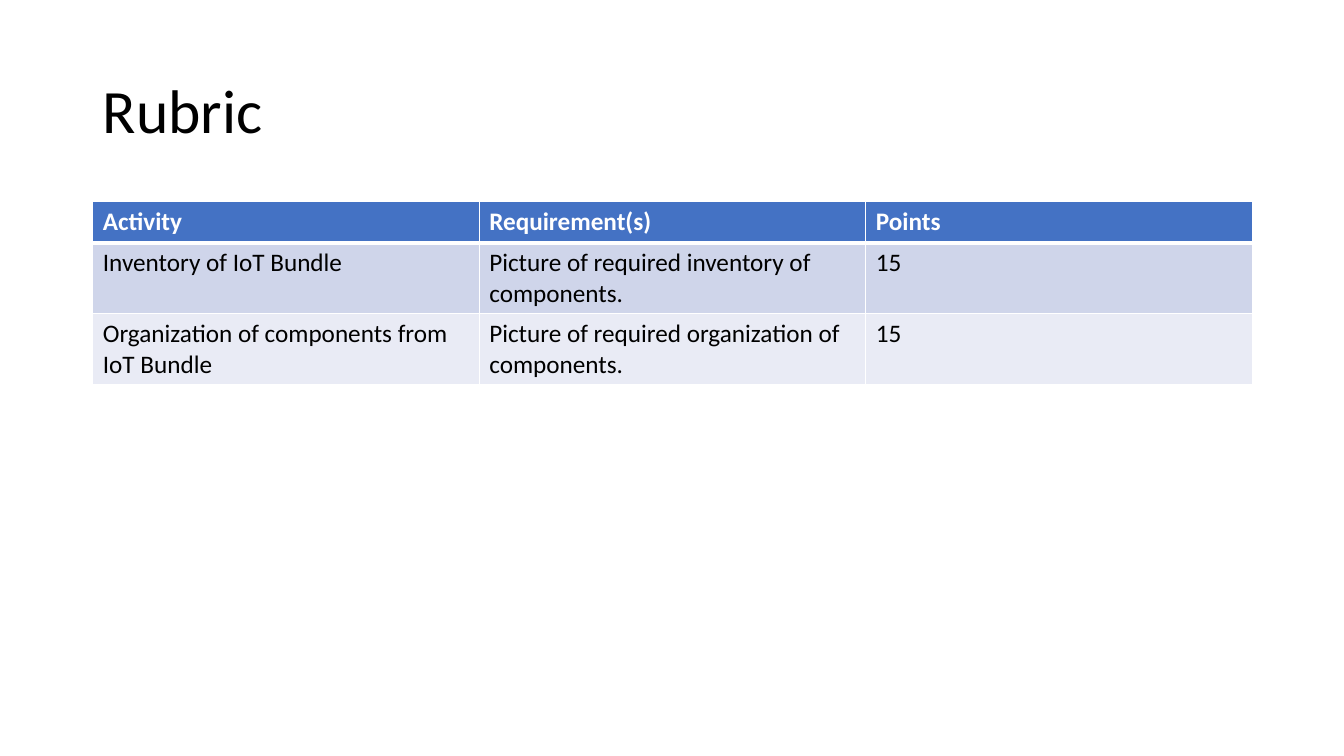
from lxml import etree
from pptx import Presentation
from pptx.dml.color import RGBColor
from pptx.enum.text import MSO_ANCHOR
from pptx.oxml.ns import qn
from pptx.util import Inches, Pt

MIDDLE = MSO_ANCHOR.MIDDLE
FONT = "Calibri"
COLORS = {
    "text": "000000",
    "header": "4472C4",
    "header_text": "FFFFFF",
    "odd_row": "CFD5EA",
    "even_row": "E9EBF5",
    "border": "FFFFFF",
}
ROW_HEIGHT = 0.41
RUBRIC = [
    ("Activity", "Requirement(s)", "Points"),
    ("Inventory of IoT Bundle", "Picture of required inventory of components.", "15"),
    ("Organization of components from IoT Bundle",
     "Picture of required organization of components.", "15"),
]


def style_paragraph(para, size, color, bold=False):
    """Set the font of a whole paragraph."""
    font = para.font
    font.name, font.size, font.bold = FONT, Pt(size), bold
    font.color.rgb = RGBColor.from_string(COLORS[color])


def add_title(slide, box, text):
    """Place the slide title, vertically centred in its box."""
    frame = slide.shapes.add_textbox(*map(Inches, box)).text_frame
    frame.word_wrap = True
    frame.vertical_anchor = MIDDLE
    para = frame.paragraphs[0]
    para.text = text
    para.line_spacing = 0.9
    style_paragraph(para, 44, "text")


def add_borders(cell, bottom_width):
    """Draw the four cell borders, with the given width at the bottom."""
    properties = cell._tc.get_or_add_tcPr()
    for side, width in (("L", 1), ("R", 1), ("T", 1), ("B", bottom_width)):
        line = etree.SubElement(properties, qn(f"a:ln{side}"), w=str(Pt(width)))
        fill = etree.SubElement(line, qn("a:solidFill"))
        etree.SubElement(fill, qn("a:srgbClr"), val=COLORS["border"])


def add_rubric(slide, box, rows):
    """Fill the box width with equal columns under a header row."""
    left, top, width = box
    table = slide.shapes.add_table(
        len(rows), len(rows[0]), Inches(left), Inches(top),
        Inches(width), Inches(ROW_HEIGHT * len(rows))).table
    for row_index, row in enumerate(rows):
        is_header = row_index == 0
        band = "header" if is_header else "odd_row" if row_index % 2 else "even_row"
        for column_index, text in enumerate(row):
            cell = table.cell(row_index, column_index)
            cell.text = text
            add_borders(cell, 3 if is_header else 1)
            cell.fill.solid()
            cell.fill.fore_color.rgb = RGBColor.from_string(COLORS[band])
            style_paragraph(cell.text_frame.paragraphs[0], 18,
                            "header_text" if is_header else "text", is_header)


def main():
    """Build and save the rubric slide."""
    deck = Presentation()
    deck.slide_width, deck.slide_height = Inches(13.33), Inches(7.5)
    slide = deck.slides.add_slide(deck.slide_layouts[6])
    left, width = 0.92, 11.5
    add_title(slide, (left, 0.4, width, 1.45), "Rubric")
    add_rubric(slide, (left, 2, width), RUBRIC)
    deck.save("out.pptx")


if __name__ == "__main__":
    main()
